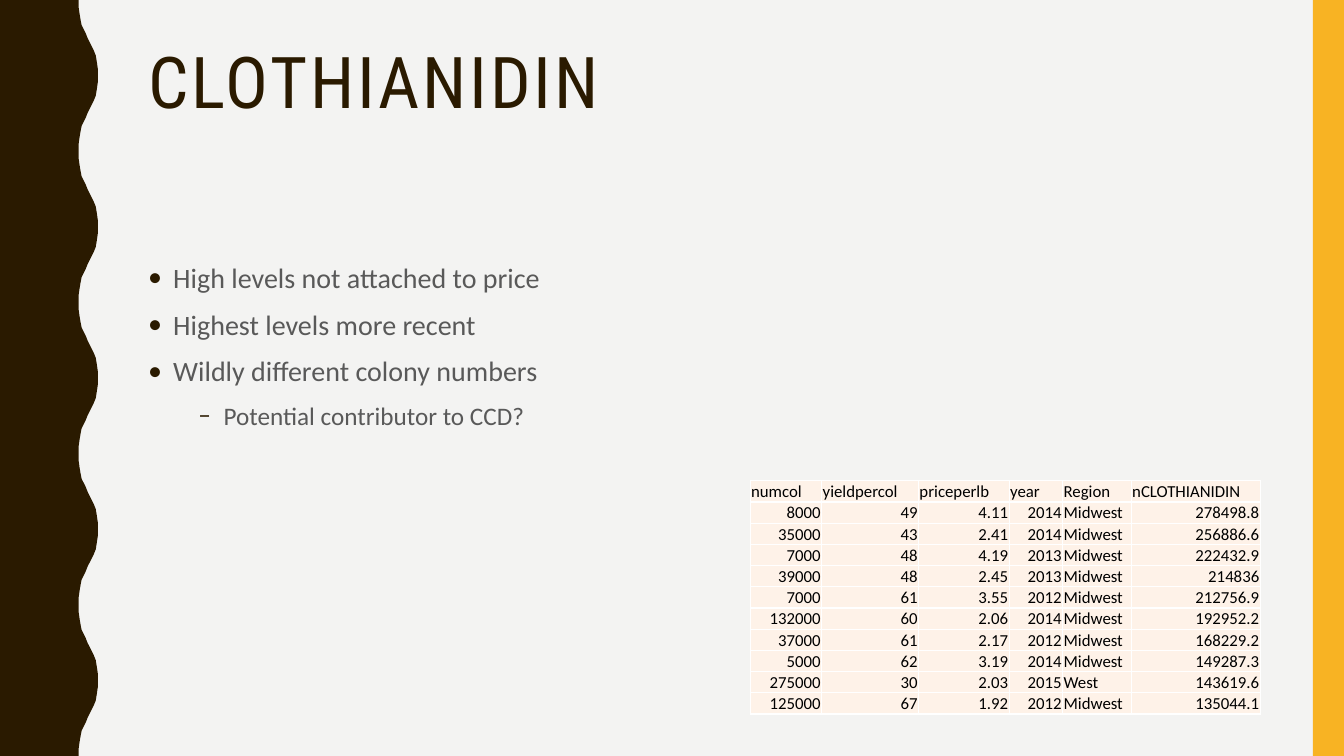
import pptx
import pptx.util
import pptx.dml.color
import pptx.enum.shapes
import pptx.enum.text
import pptx.oxml
import pptx.oxml.ns

Inches = pptx.util.Inches
Pt = pptx.util.Pt
DARK, GOLD, GREY, CREAM = "2A1A00", "F8B323", "595959", "FEF2E8"


def color(hex_value):
    return pptx.dml.color.RGBColor.from_string(hex_value)


def add_xml(parent, position, body):
    namespace = pptx.oxml.ns.nsdecls("a")
    tag, rest = body.split(" ", 1)
    parent.insert(position, pptx.oxml.parse_xml(f"<{tag} {namespace} {rest}"))


deck = pptx.Presentation()
deck.slide_width, deck.slide_height = Inches(13.33), Inches(7.5)
page = deck.slides.add_slide(deck.slide_layouts[6])
page.background.fill.solid()
page.background.fill.fore_color.rgb = color("F3F3F2")

half_wave = [
    (0.78, 0), (0.78, 0.07), (0.79, 0.14), (0.8, 0.2), (0.81, 0.25),
    (0.83, 0.29), (0.85, 0.33), (0.87, 0.38), (0.89, 0.42), (0.91, 0.46),
    (0.93, 0.5), (0.95, 0.55), (0.96, 0.61), (0.97, 0.68), (0.97, 0.75),
]
period = 1.5
full_wave = half_wave + [(x, period - y) for x, y in half_wave[-2::-1]]
edge = [(x, y + period * turn) for turn in range(5) for x, y in full_wave]
outline = [(Inches(x), Inches(y)) for x, y in edge + [(0, 7.5)]]
builder = page.shapes.build_freeform(0, 0, scale=1.0)
builder.add_line_segments(outline, close=True)
wave = builder.convert_to_shape()
stripe = page.shapes.add_shape(
    pptx.enum.shapes.MSO_SHAPE.RECTANGLE, Inches(13.02), 0, Inches(0.31), Inches(7.5)
)
for shape, fill in ((wave, DARK), (stripe, GOLD)):
    shape.shadow.inherit = False
    shape.fill.solid()
    shape.fill.fore_color.rgb = color(fill)
    shape.line.fill.background()

title = {"text": "CLOTHIANIDIN", "size": 51, "font": "Roboto Condensed", "color": DARK,
         "spacing": 0.9, "before": 0, "bullet": None, "indent": 0}
point = {"size": 20, "font": "Calibri", "color": GREY,
         "spacing": 1.1, "before": 7, "bullet": "•", "indent": 0.25}
points = [
    {**point, "text": "High levels not attached to price"},
    {**point, "text": "Highest levels more recent"},
    {**point, "text": "Wildly different colony numbers"},
    {**point, "text": "Potential contributor to CCD?", "size": 18, "bullet": "–", "indent": 0.75},
]
for top, height, lines in ((0.42, 1.63, [title]), (2.5, 3.93, points)):
    box = page.shapes.add_textbox(Inches(1.37), Inches(top), Inches(11.13), Inches(height))
    frame = box.text_frame
    frame.word_wrap = True
    for number, line in enumerate(lines):
        para = frame.add_paragraph() if number else frame.paragraphs[0]
        para.line_spacing = line["spacing"]
        para.space_before = Pt(line["before"])
        span = para.add_run()
        span.text = line["text"]
        for name, value in {"size": Pt(line["size"]), "name": line["font"]}.items():
            setattr(span.font, name, value)
        span.font.color.rgb = color(line["color"])
        if line["bullet"]:
            para.level = 1 if line["indent"] > 0.25 else 0
            properties = para._p.get_or_add_pPr()
            properties.set("marL", str(Inches(line["indent"])))
            properties.set("indent", str(Inches(-0.25)))
            for body in (
                f'a:buClr ><a:srgbClr val="{DARK}"/></a:buClr>',
                'a:buFont typeface="Calibri"/>',
                f'a:buChar char="{line["bullet"]}"/>',
            ):
                add_xml(properties, len(properties), body)
        else:
            span.font._element.set("spc", "200")

records = [
    ("numcol", "yieldpercol", "priceperlb", "year", "Region", "nCLOTHIANIDIN"),
    ("8000", "49", "4.11", "2014", "Midwest", "278498.8"),
    ("35000", "43", "2.41", "2014", "Midwest", "256886.6"),
    ("7000", "48", "4.19", "2013", "Midwest", "222432.9"),
    ("39000", "48", "2.45", "2013", "Midwest", "214836"),
    ("7000", "61", "3.55", "2012", "Midwest", "212756.9"),
    ("132000", "60", "2.06", "2014", "Midwest", "192952.2"),
    ("37000", "61", "2.17", "2012", "Midwest", "168229.2"),
    ("5000", "62", "3.19", "2014", "Midwest", "149287.3"),
    ("275000", "30", "2.03", "2015", "West", "143619.6"),
    ("125000", "67", "1.92", "2012", "Midwest", "135044.1"),
]
widths = [0.71, 0.96, 0.9, 0.53, 0.68, 1.28]
table = page.shapes.add_table(
    len(records), len(widths), Inches(7.44), Inches(4.77), Inches(5.06), Inches(2.31)
).table
table.first_row = table.horz_banding = False
for column, width in zip(table.columns, widths):
    column.width = Inches(width)

cell_format = {
    "margin_left": Inches(0.01), "margin_right": Inches(0.01),
    "margin_top": Inches(0.01), "margin_bottom": 0,
    "vertical_anchor": pptx.enum.text.MSO_ANCHOR.BOTTOM,
}
cell_font = {"size": Pt(12), "name": "Calibri", "bold": False}
for row_number, record in enumerate(records):
    table.rows[row_number].height = Inches(0.21)
    for column_number, text in enumerate(record):
        cell = table.cell(row_number, column_number)
        for name, value in cell_format.items():
            setattr(cell, name, value)
        cell.fill.solid()
        cell.fill.fore_color.rgb = color(CREAM)
        para = cell.text_frame.paragraphs[0]
        if row_number and records[0][column_number] != "Region":
            para.alignment = pptx.enum.text.PP_ALIGN.RIGHT
        span = para.add_run()
        span.text = text
        for name, value in cell_font.items():
            setattr(span.font, name, value)
        span.font.color.rgb = color("000000")
        for position, side in enumerate("LRTB"):
            add_xml(
                cell._tc.get_or_add_tcPr(), position,
                f'a:ln{side} w="{Pt(1)}"><a:solidFill><a:srgbClr val="FFFFFF"/>'
                f'</a:solidFill></a:ln{side}>',
            )

deck.save("out.pptx")
